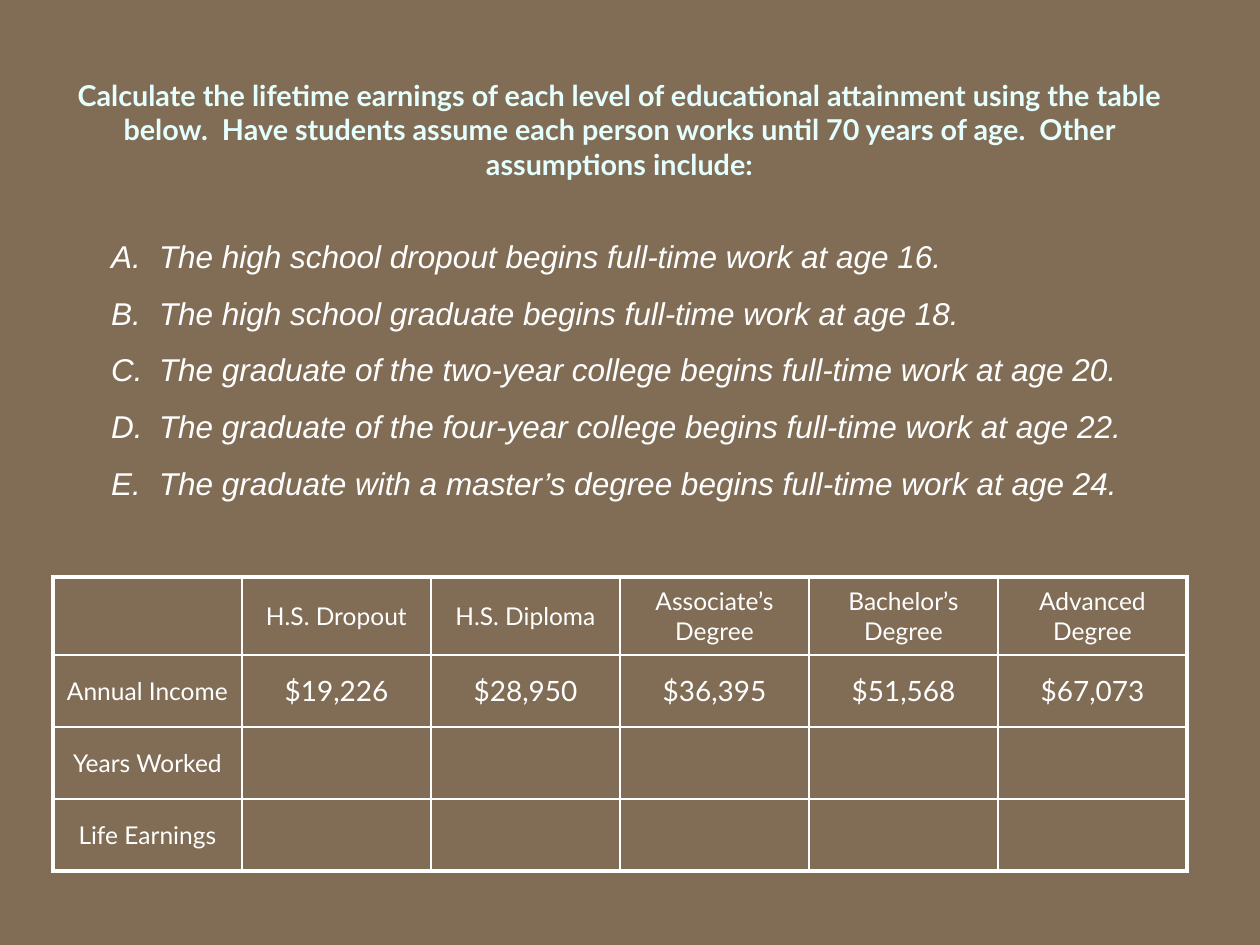
from lxml import etree
from pptx import Presentation
from pptx.dml.color import RGBColor
from pptx.enum.text import MSO_ANCHOR, MSO_AUTO_SIZE, PP_ALIGN
from pptx.oxml.ns import qn
from pptx.util import Pt

CENTER = PP_ALIGN.CENTER
MIDDLE = MSO_ANCHOR.MIDDLE
FIT_SHAPE = MSO_AUTO_SIZE.SHAPE_TO_FIT_TEXT
NO_FIT = MSO_AUTO_SIZE.NONE

HEADING = ("Calculate the lifetime earnings of each level of educational attainment "
           "using the table below.  Have students assume each person works until "
           "70 years of age.  Other assumptions include:")
ASSUMPTIONS = [
    "The high school dropout begins full-time work at age 16.",
    "The high school graduate begins full-time work at age 18.",
    "The graduate of the two-year college begins full-time work at age 20.",
    "The graduate of the four-year college begins full-time work at age 22.",
    "The graduate with a master’s degree begins full-time work at age 24.",
]
EARNINGS = [
    ["", "H.S. Dropout", "H.S. Diploma", "Associate’s Degree", "Bachelor’s Degree",
     "Advanced Degree"],
    ["Annual Income", "$19,226", "$28,950", "$36,395", "$51,568", "$67,073"],
    ["Years Worked", "", "", "", "", ""],
    ["Life Earnings", "", "", "", "", ""],
]
ROW_HEIGHTS = [78, 72, 72, 72]
COLUMN_WIDTH = 189
BACKGROUND, HEADING_COLOR, WHITE = "816D56", "E5FFFF", "FFFFFF"
INSET, INDENT = 6, 48


def px(n):
    return round(n * 914400 / 126)


def color(hex_value):
    return RGBColor.from_string(hex_value)


def style(font, name, size, hex_value, bold=False, italic=False):
    font.name, font.size = name, Pt(size)
    font.bold, font.italic = bold, italic
    font.color.rgb = color(hex_value)


def set_insets(target, left, top, right, bottom):
    target.margin_left, target.margin_top = px(left), px(top)
    target.margin_right, target.margin_bottom = px(right), px(bottom)


def add_border(cell, side, points):
    line = etree.SubElement(cell._tc.get_or_add_tcPr(), qn(f"a:ln{side}"),
                            w=str(Pt(points)))
    fill = etree.SubElement(line, qn("a:solidFill"))
    etree.SubElement(fill, qn("a:srgbClr"), val=WHITE)


def add_heading(slide):
    title = slide.shapes.title
    title.left, title.top, title.width, title.height = map(px, (63, 71, 1113, 151))
    frame = title.text_frame
    frame.text = HEADING
    frame.word_wrap, frame.auto_size = True, NO_FIT
    frame.vertical_anchor = MIDDLE
    set_insets(frame, 0, 0, 0, 34)
    paragraph = frame.paragraphs[0]
    paragraph.alignment = CENTER
    style(paragraph.font, "Lato", 16.4, HEADING_COLOR, bold=True)


def add_assumptions(slide):
    frame = slide.shapes.add_textbox(*map(px, (105, 231, 1050, 271))).text_frame
    frame.text = "\n".join(ASSUMPTIONS)
    frame.word_wrap, frame.auto_size = True, FIT_SHAPE
    set_insets(frame, INSET, INSET, INSET, INSET)
    for i, paragraph in enumerate(frame.paragraphs):
        paragraph.space_before = Pt(10.8 if i else 0)
        properties = paragraph._p.get_or_add_pPr()
        properties.set("marL", str(px(INDENT)))
        properties.set("indent", str(-px(INDENT)))
        etree.SubElement(properties, qn("a:buFont"), typeface="Arial")
        etree.SubElement(properties, qn("a:buAutoNum"), type="alphaUcPeriod")
        style(paragraph.font, "Arial", 18, WHITE, italic=True)


def add_earnings(slide):
    row_count, column_count = len(EARNINGS), len(EARNINGS[0])
    table = slide.shapes.add_table(
        row_count, column_count, px(53), px(577),
        px(COLUMN_WIDTH * column_count), px(sum(ROW_HEIGHTS))).table
    table.first_row = table.horz_banding = False
    for column in table.columns:
        column.width = px(COLUMN_WIDTH)
    for r, (values, height) in enumerate(zip(EARNINGS, ROW_HEIGHTS)):
        table.rows[r].height = px(height)
        for c, value in enumerate(values):
            cell = table.cell(r, c)
            outer_sides = {"L": c == 0, "R": c == column_count - 1,
                           "T": r == 0, "B": r == row_count - 1}
            for side, is_outer in outer_sides.items():
                add_border(cell, side, 2.25 if is_outer else 1)
            cell.fill.background()
            cell.vertical_anchor = MIDDLE
            set_insets(cell, INSET, INSET, INSET, INSET)
            cell.text = value
            paragraph = cell.text_frame.paragraphs[0]
            paragraph.alignment = CENTER
            style(paragraph.font, "Lato", 16 if value.startswith("$") else 14, WHITE)


def main():
    deck = Presentation()
    deck.slide_width, deck.slide_height = px(1260), px(945)
    slide = deck.slides.add_slide(deck.slide_layouts[5])
    slide.background.fill.solid()
    slide.background.fill.fore_color.rgb = color(BACKGROUND)
    add_heading(slide)
    add_earnings(slide)
    add_assumptions(slide)
    deck.save("out.pptx")


if __name__ == "__main__":
    main()
